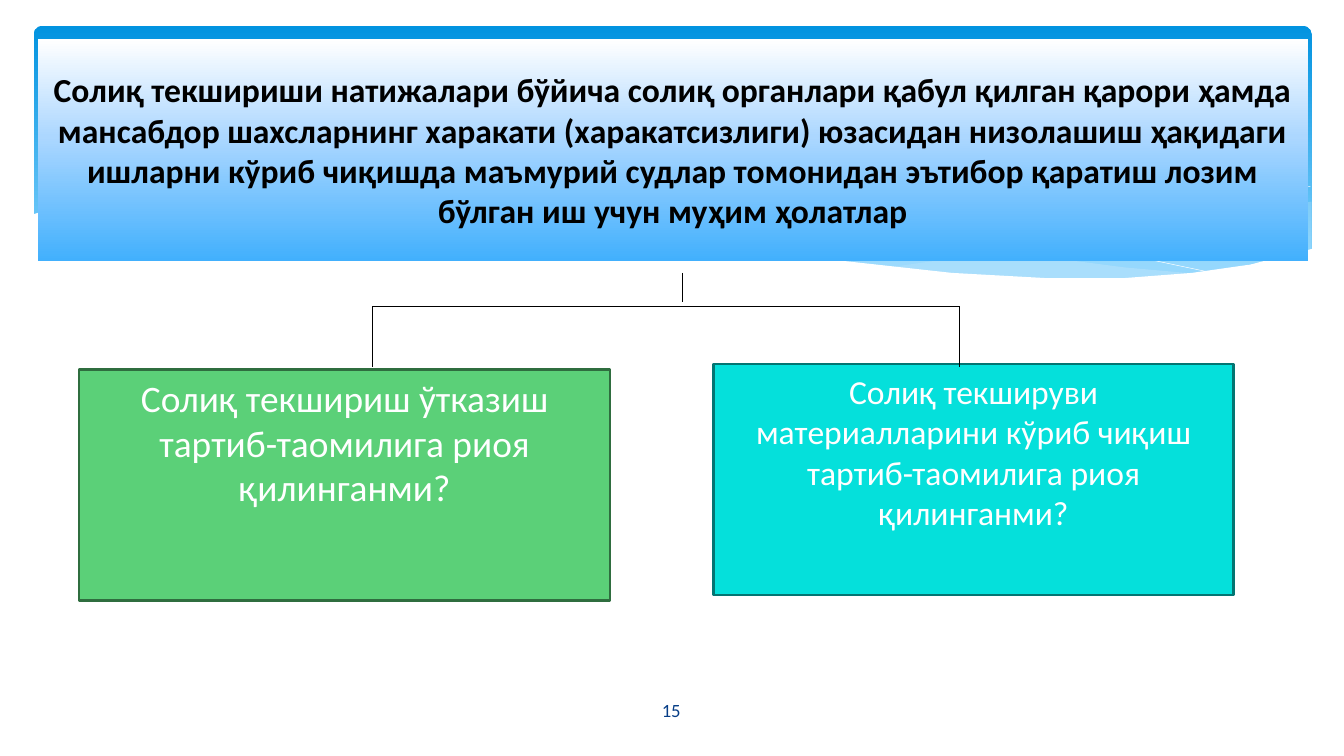
from copy import deepcopy

from lxml import etree
from pptx import Presentation
from pptx.dml.color import RGBColor
from pptx.enum import shapes, text
from pptx.oxml.ns import qn
from pptx.util import Pt

WHITE = RGBColor(0xFF, 0xFF, 0xFF)
BLACK = RGBColor(0x00, 0x00, 0x00)
NAVY = RGBColor(0x07, 0x3E, 0x87)
GREEN = RGBColor(0x5B, 0xD0, 0x78)
DARK_GREEN = RGBColor(0x2F, 0x6D, 0x3F)
CYAN = RGBColor(0x05, 0xE0, 0xDB)
DARK_CYAN = RGBColor(0x03, 0x75, 0x72)
PALE_BLUE = RGBColor(0xC6, 0xE7, 0xFC)
PANEL_STOPS = [(0, RGBColor(0x02, 0x93, 0xE0)), (0.9, RGBColor(0x83, 0xD3, 0xFE))]
TITLE_STOPS = [(0, WHITE), (0.44, RGBColor(0xAC, 0xD7, 0xFF)),
               (1, RGBColor(0x42, 0xB0, 0xFD))]

# Content: boxes are left, top, width, height
TITLE = ("Солиқ текшириши натижалари бўйича солиқ органлари қабул қилган қарори "
         "ҳамда мансабдор шахсларнинг харакати (харакатсизлиги) юзасидан низолашиш "
         "ҳақидаги ишларни кўриб чиқишда маъмурий судлар томонидан эътибор қаратиш "
         "лозим бўлган иш учун муҳим ҳолатлар")
PANEL_BOX = (18, 13.7, 684.7, 145.4)
TITLE_BOX = (20.2, 20.9, 680.4, 118.8)
PAGE_BOX = (313.9, 369.4, 91.4, 21.6)
QUESTIONS = [
    dict(text="Солиқ текшируви материалларини кўриб чиқиш тартиб-таомилига риоя қилинганми?",
         box=(382.3, 195.1, 278.6, 123.8), fill=CYAN, line=DARK_CYAN,
         size=18, before=3.6, inset=(7.2, 3.6)),
    dict(text="Солиқ текшириш ўтказиш тартиб-таомилига риоя қилинганми?",
         box=(42.5, 198, 284.4, 123.8), fill=GREEN, line=DARK_GREEN,
         size=20, before=10, inset=(5, 2.9)),
]
STEM_X, STEM_TOP, STEM_END = 365.8, 146.2, 162
LEFT_X, RIGHT_X, BRANCH_Y, BRANCH_END = 199.4, 514.1, 164.2, 196.6
BRANCHES = [
    (STEM_X, STEM_TOP, STEM_X, STEM_END),
    (LEFT_X, BRANCH_Y, LEFT_X, BRANCH_END),
    (RIGHT_X, BRANCH_Y, RIGHT_X, BRANCH_END),
    (RIGHT_X, BRANCH_Y, LEFT_X, BRANCH_Y),
]

# Wave outlines under the header panel
RIGHT_WAVE = [(702.7, 108), (652.3, 115.2), (599, 124.6), (542.2, 133.9), (475.9, 143.3),
              (507.6, 146.2), (545, 149), (586, 149.8), (621.4, 148.3), (651.6, 145.4),
              (678.2, 139.7), (702.7, 133.2)]
LONG_WAVE = [(206, 103.7), (246, 107.3), (323, 119.5), (381.6, 129.6), (445, 139.7),
             (500.4, 146.2), (548, 149.8), (589, 150.5), (617, 149.8), (643, 146.9),
             (602.6, 143.3), (558, 137.5), (508.3, 129.6), (452.9, 119.5),
             (389.5, 109.4), (334.8, 103), (273.6, 100), (236, 100.8)]
FALLING_CREST = [(222.5, 105.8), (261.4, 101.5), (311.8, 100.8), (367.2, 103.7), (419, 108),
                 (478.8, 115.2), (547.2, 126), (598.3, 135.4), (653, 146.9)]
RISING_CREST = [(441.4, 138.2), (500.4, 127.4), (558.7, 116.6), (623.5, 107.3),
                (665.3, 102.2), (702, 100)]
PAPER_EDGE = [(703.4, 133.2), (669.6, 141.8), (638.6, 146.2), (602.6, 149), (560, 149),
              (509.8, 146.2), (450.7, 139.7), (380.9, 128.9), (321.8, 118.8),
              (262.8, 108.7), (210, 103), (165.6, 100), (116, 99.4), (76.3, 102.2),
              (42.5, 107.3), (16.6, 115.2), (16.6, 177.8), (703.4, 177.8)]
WAVES = [
    dict(points=RIGHT_WAVE, fill=PALE_BLUE, alpha=29),
    dict(points=LONG_WAVE, fill=PALE_BLUE, alpha=40),
    dict(points=FALLING_CREST, line=WHITE),
    dict(points=RISING_CREST, line=WHITE),
    dict(points=PAPER_EDGE, fill=WHITE),
]


def paint(shape, fill=None, line=None, width=0.25, alpha=None):
    shape.shadow.inherit = False
    if fill is None:
        shape.fill.background()
    else:
        shape.fill.solid()
        shape.fill.fore_color.rgb = fill
    if alpha:
        color = shape._element.spPr.find(".//" + qn("a:srgbClr"))
        etree.SubElement(color, qn("a:alpha"), val=str(alpha * 1000))
    if line is None:
        shape.line.fill.background()
    else:
        shape.line.color.rgb = line
        shape.line.width = Pt(width)


def paint_gradient(shape, stops):
    paint(shape)
    shape.fill.gradient()
    shape.fill.gradient_angle = 270
    stop_list = shape._element.spPr.find(".//" + qn("a:gsLst"))
    while len(stop_list) < len(stops):
        stop_list.append(deepcopy(stop_list[-1]))
    for stop, (position, color) in zip(shape.fill.gradient_stops, stops):
        stop.position = position
        stop.color.rgb = color


def write(shape, words, size, color, bold=False, before=0, inset=(7.2, 3.6),
          anchor=text.MSO_ANCHOR.MIDDLE):
    frame = shape.text_frame
    side, top = map(Pt, inset)
    layout = dict(word_wrap=True, vertical_anchor=anchor, margin_left=side,
                  margin_right=side, margin_top=top, margin_bottom=top)
    for name, value in layout.items():
        setattr(frame, name, value)
    paragraph = frame.paragraphs[0]
    paragraph.alignment = text.PP_ALIGN.CENTER
    paragraph.space_before = Pt(before)
    run = paragraph.add_run()
    run.text = words
    for name, value in dict(name="Calibri", size=Pt(size), bold=bold).items():
        setattr(run.font, name, value)
    run.font.color.rgb = color


deck = Presentation()
deck.slide_width, deck.slide_height = Pt(720), Pt(405)
slide = deck.slides.add_slide(deck.slide_layouts[6])
parts = slide.shapes

# Header panel and waves
panel = parts.add_shape(shapes.MSO_SHAPE.ROUNDED_RECTANGLE, *map(Pt, PANEL_BOX))
panel.adjustments[0] = 0.034
paint_gradient(panel, PANEL_STOPS)
for wave in WAVES:
    start, *rest = [(Pt(x), Pt(y)) for x, y in wave["points"]]
    outline = parts.build_freeform(*start)
    outline.add_line_segments(rest, close="fill" in wave)
    paint(outline.convert_to_shape(), wave.get("fill"), wave.get("line"),
          alpha=wave.get("alpha"))

# Title
title = parts.add_shape(shapes.MSO_SHAPE.RECTANGLE, *map(Pt, TITLE_BOX))
paint_gradient(title, TITLE_STOPS)
write(title, TITLE, 18, BLACK, bold=True)

# Question boxes
for question in QUESTIONS:
    box = parts.add_shape(shapes.MSO_SHAPE.RECTANGLE, *map(Pt, question["box"]))
    paint(box, question["fill"], question["line"], 1.25)
    write(box, question["text"], question["size"], WHITE, before=question["before"],
          inset=question["inset"], anchor=text.MSO_ANCHOR.TOP)

# Branch lines
for ends in BRANCHES:
    branch = parts.add_connector(shapes.MSO_CONNECTOR.STRAIGHT, *map(Pt, ends))
    branch.line.color.rgb = BLACK
    branch.line.width = Pt(0.75)
    etree.SubElement(branch._element.spPr, qn("a:effectLst"))

# Page number
write(parts.add_textbox(*map(Pt, PAGE_BOX)), "15", 10, NAVY)

deck.save("out.pptx")
